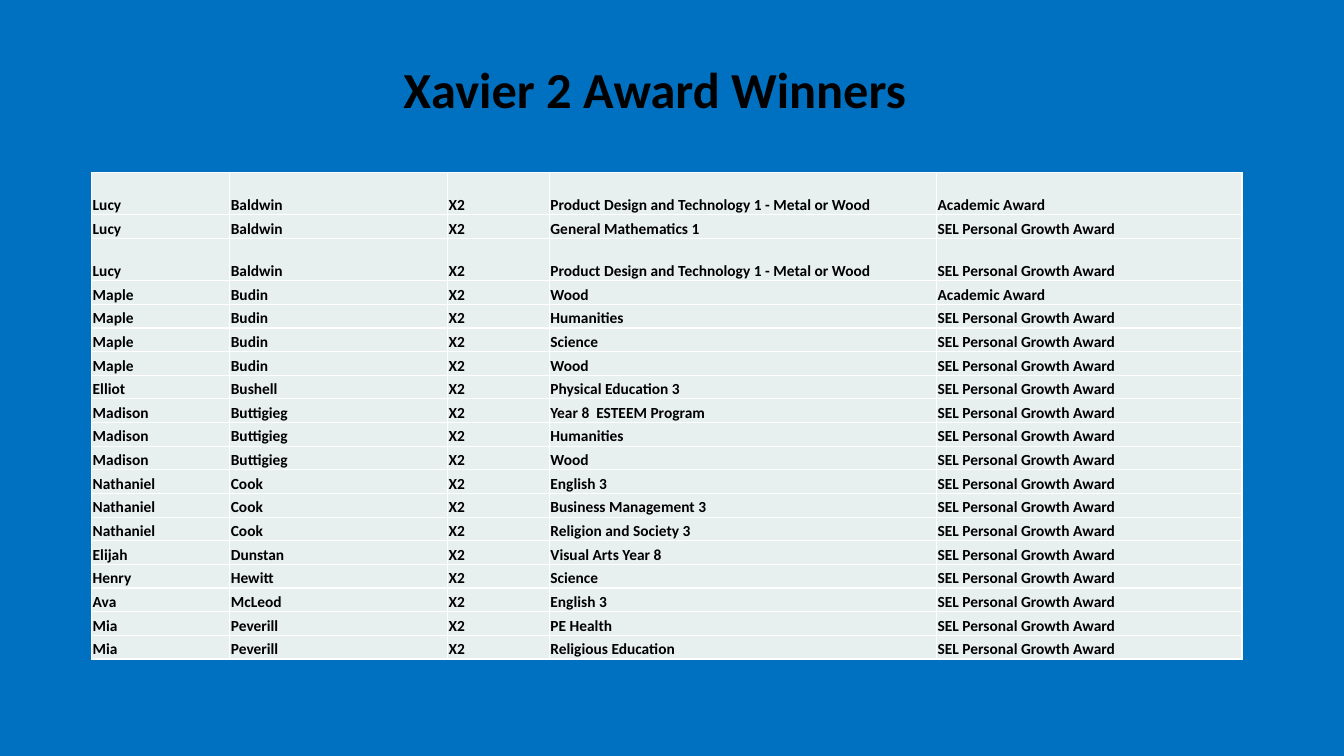
from lxml.etree import SubElement
from pptx import Presentation
from pptx.dml.color import RGBColor as Rgb
from pptx.enum.text import MSO_ANCHOR as Anchor, PP_ALIGN as Align
from pptx.oxml.ns import qn
from pptx.util import Inches, Pt

COLOURS = {"background": "0070C0", "cell": "E8EFEF", "border": "FFFFFF", "text": "000000"}
FONT = "Calibri"
CLASS = "X2"
ACADEMIC, GROWTH = "Academic Award", "SEL Personal Growth Award"
PRODUCT_DESIGN = "Product Design and Technology 1 - Metal or Wood"

WINNERS = [
    ("Lucy", "Baldwin", [(PRODUCT_DESIGN, ACADEMIC), ("General Mathematics 1", GROWTH),
                         (PRODUCT_DESIGN, GROWTH)]),
    ("Maple", "Budin", [("Wood", ACADEMIC), ("Humanities", GROWTH),
                        ("Science", GROWTH), ("Wood", GROWTH)]),
    ("Elliot", "Bushell", [("Physical Education 3", GROWTH)]),
    ("Madison", "Buttigieg", [("Year 8  ESTEEM Program", GROWTH), ("Humanities", GROWTH),
                              ("Wood", GROWTH)]),
    ("Nathaniel", "Cook", [("English 3", GROWTH), ("Business Management 3", GROWTH),
                           ("Religion and Society 3", GROWTH)]),
    ("Elijah", "Dunstan", [("Visual Arts Year 8", GROWTH)]),
    ("Henry", "Hewitt", [("Science", GROWTH)]),
    ("Ava", "McLeod", [("English 3", GROWTH)]),
    ("Mia", "Peverill", [("PE Health", GROWTH), ("Religious Education", GROWTH)]),
]

TITLE_BOX = (0.67, 0.6, 11.65, 1.24)
AWARDS_BOX = (0.91, 1.71, 11.41, 4.83)
COLUMN_WIDTHS = [1.37, 2.16, 1.01, 3.84, 3.03]
TALL_ROW = 0.42

CELL_FORMAT = {"margin_left": Inches(0.01), "margin_right": Inches(0.01),
               "margin_top": Inches(0.01), "margin_bottom": 0,
               "vertical_anchor": Anchor.BOTTOM}


def colour(name):
    return Rgb.from_string(COLOURS[name])


def write(paragraph, wording, size):
    run = paragraph.add_run()
    run.text = wording
    for attribute, value in {"name": FONT, "size": Pt(size), "bold": True}.items():
        setattr(run.font, attribute, value)
    run.font.color.rgb = colour("text")


def add_borders(cell):
    properties = cell._tc.get_or_add_tcPr()
    for position, side in enumerate(("lnL", "lnR", "lnT", "lnB")):
        line = SubElement(properties, qn(f"a:{side}"), w=str(Pt(1)))
        fill = SubElement(line, qn("a:solidFill"))
        SubElement(fill, qn("a:srgbClr"), val=COLOURS["border"])
        properties.insert(position, line)  # borders come before the cell fill


def add_title(slide, box):
    frame = slide.shapes.add_textbox(*map(Inches, box)).text_frame
    frame.word_wrap = True
    frame.vertical_anchor = Anchor.TOP
    heading = frame.paragraphs[0]
    heading.alignment = Align.CENTER
    heading.line_spacing = 0.9
    write(heading, "Xavier 2 Award Winners", 36)


def add_awards(slide, box):
    awards = [(first, last, CLASS, subject, award)
              for first, last, prizes in WINNERS for subject, award in prizes]
    table = slide.shapes.add_table(len(awards), len(COLUMN_WIDTHS), *map(Inches, box)).table
    table.first_row = table.horz_banding = False
    for column, width in zip(table.columns, COLUMN_WIDTHS):
        column.width = Inches(width)

    # Rows with the long subject are tall; the others share the remaining height
    tall = [PRODUCT_DESIGN in award for award in awards]
    short_row = (box[3] - TALL_ROW * sum(tall)) / (len(awards) - sum(tall))
    for row, is_tall, award in zip(table.rows, tall, awards):
        row.height = Inches(TALL_ROW if is_tall else short_row)
        for cell, wording in zip(row.cells, award):
            for attribute, value in CELL_FORMAT.items():
                setattr(cell, attribute, value)
            cell.fill.solid()
            cell.fill.fore_color.rgb = colour("cell")
            add_borders(cell)
            write(cell.text_frame.paragraphs[0], wording, 11)


def main():
    deck = Presentation()
    deck.slide_width, deck.slide_height = Inches(13.33), Inches(7.5)
    slide = deck.slides.add_slide(deck.slide_layouts[6])
    slide.background.fill.solid()
    slide.background.fill.fore_color.rgb = colour("background")
    add_title(slide, TITLE_BOX)
    add_awards(slide, AWARDS_BOX)
    deck.save("out.pptx")


if __name__ == "__main__":
    main()
